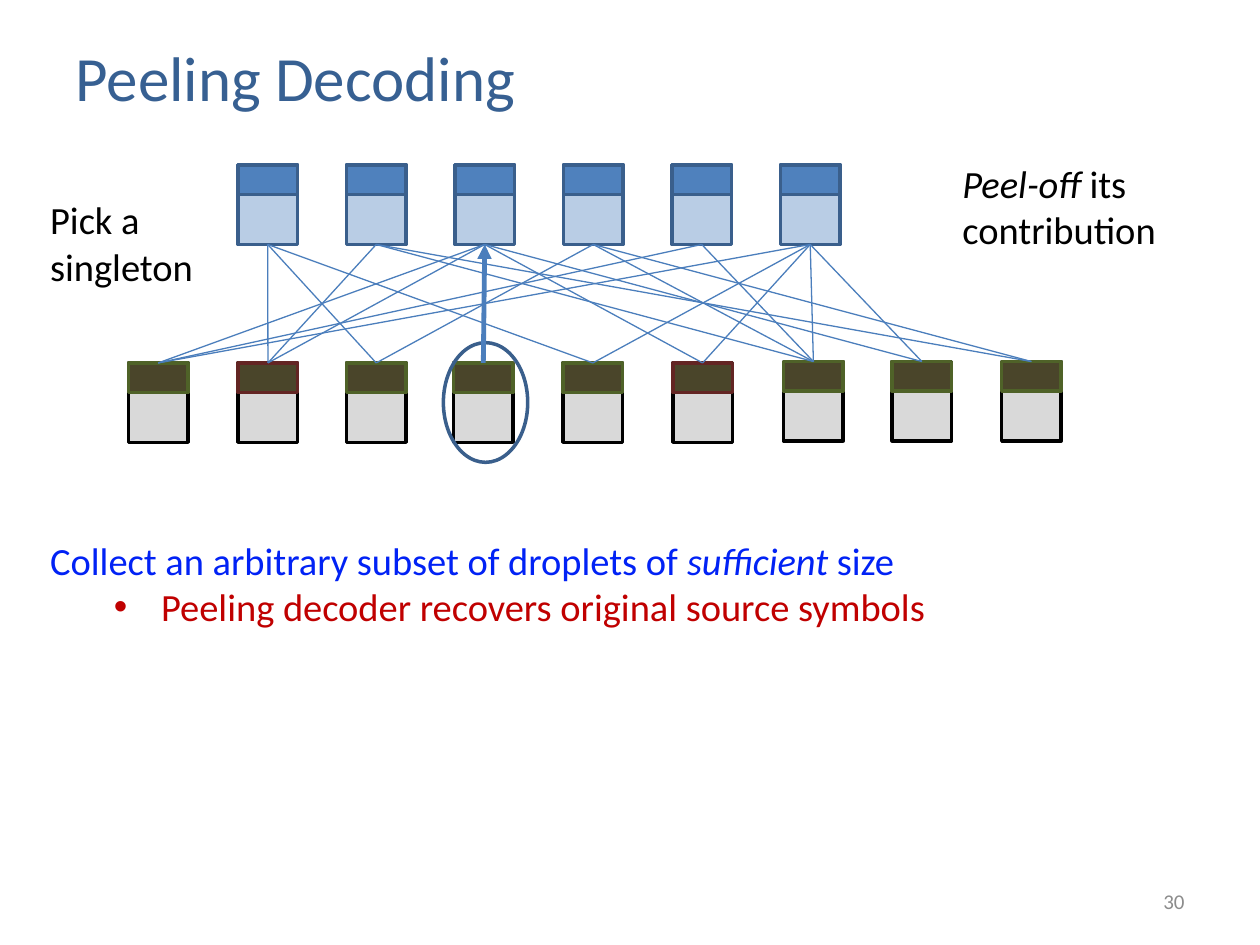
from dataclasses import dataclass

from lxml.etree import SubElement
from pptx import Presentation
from pptx.dml.color import RGBColor
from pptx.enum.shapes import MSO_CONNECTOR, MSO_SHAPE
from pptx.enum.text import MSO_ANCHOR, MSO_AUTO_SIZE, PP_ALIGN
from pptx.oxml.ns import qn
from pptx.shapes.autoshape import Shape
from pptx.slide import Slide
from pptx.util import Pt

FONT = "Calibri"
TITLE_BLUE = RGBColor(0x37, 0x60, 0x92)
OUTLINE_BLUE = RGBColor(0x3A, 0x5F, 0x8C)
EDGE_BLUE = RGBColor(0x4B, 0x7E, 0xBC)
SYMBOL_HEADER = RGBColor(0x4F, 0x81, 0xBD)
SYMBOL_BODY = RGBColor(0xB9, 0xCD, 0xE5)
DROPLET_HEADER = RGBColor(0x4A, 0x45, 0x2A)
DROPLET_BODY = RGBColor(0xD9, 0xD9, 0xD9)
GREEN = RGBColor(0x4F, 0x62, 0x28)
DARK_RED = RGBColor(0x63, 0x25, 0x23)
BLACK = RGBColor(0, 0, 0)
GREY = RGBColor(0x8C, 0x8C, 0x8C)
CLAIM_BLUE = RGBColor(0x01, 0x22, 0xF5)
RESULT_RED = RGBColor(0xC0, 0, 0)

PACKET_WIDTH, PACKET_HEIGHT, HEADER_HEIGHT = 34, 45.4, 17
SYMBOL_LEFT, SYMBOL_TOP, SYMBOL_PITCH, SYMBOL_COUNT = 136, 94.3, 62, 6
DROPLET_LEFTS = (73.4, 136.1, 198, 259.2, 321.8, 384.5, 447.8, 509.8, 572.4)
LOWER_TOP, UPPER_TOP = 207.4, 206.6
RED_DROPLETS = {1, 5}
SINGLETON_SYMBOL, SINGLETON_DROPLET = 2, 3

# Droplets that each source symbol contributes to
NEIGHBOURS = (
    (1, 2, 4),
    (1, 6, 8),
    (0, 1, 5, 7, 3),
    (2, 6, 8),
    (0, 6),
    (0, 7, 4, 5, 6),
)


@dataclass(frozen=True)
class PacketStyle:
    body: RGBColor
    body_line: RGBColor
    header: RGBColor
    header_line: RGBColor


@dataclass(frozen=True)
class Packet:
    body: Shape
    header: Shape


@dataclass(frozen=True)
class Phrase:
    text: str
    italic: bool = False


def add_outlined(slide: Slide, kind: MSO_SHAPE, left: float, top: float, width: float,
                 height: float, line: RGBColor, fill: RGBColor | None = None) -> Shape:
    outlined = slide.shapes.add_shape(kind, Pt(left), Pt(top), Pt(width), Pt(height))
    outlined.shadow.inherit = False
    if fill is None:
        outlined.fill.background()
    else:
        outlined.fill.solid()
        outlined.fill.fore_color.rgb = fill
    outlined.line.color.rgb = line
    outlined.line.width = Pt(2)
    return outlined


def add_packet(slide: Slide, left: float, top: float, style: PacketStyle) -> Packet:
    body = add_outlined(slide, MSO_SHAPE.RECTANGLE, left, top, PACKET_WIDTH,
                        PACKET_HEIGHT, style.body_line, style.body)
    header = add_outlined(slide, MSO_SHAPE.RECTANGLE, left, top, PACKET_WIDTH,
                          HEADER_HEIGHT, style.header_line, style.header)
    return Packet(body, header)


def join(slide: Slide, start: Shape, start_side: int, end: Shape, end_side: int,
         width: float, arrow: bool = False) -> None:
    edge = slide.shapes.add_connector(MSO_CONNECTOR.STRAIGHT, 0, 0, 0, 0)
    edge.begin_connect(start, start_side)
    edge.end_connect(end, end_side)
    edge.line.color.rgb = EDGE_BLUE
    edge.line.width = Pt(width)
    if arrow:
        SubElement(edge.line._get_or_add_ln(), qn("a:tailEnd"), type="triangle")
    SubElement(edge._element.spPr, qn("a:effectLst"))


def style_font(font, size: float, color: RGBColor) -> None:
    font.name = FONT
    font.size = Pt(size)
    font.color.rgb = color


def add_text(slide: Slide, left: float, top: float, width: float, height: float,
             phrases: list[Phrase], color: RGBColor = BLACK, size: float = 22) -> Shape:
    box = slide.shapes.add_textbox(Pt(left), Pt(top), Pt(width), Pt(height))
    frame = box.text_frame
    frame.word_wrap = True
    frame.auto_size = MSO_AUTO_SIZE.SHAPE_TO_FIT_TEXT
    for phrase in phrases:
        run = frame.paragraphs[0].add_run()
        run.text = phrase.text
        style_font(run.font, size, color)
        run.font.italic = phrase.italic
    return box


def add_bullet(box: Shape, text: str, color: RGBColor) -> None:
    bullet = box.text_frame.add_paragraph()
    bullet.text = text
    bullet.level = 1
    properties = bullet._p.get_or_add_pPr()
    properties.set("marL", str(Pt(63.4)))
    properties.set("indent", str(Pt(-27)))
    SubElement(properties, qn("a:buFont"), typeface="Arial")
    SubElement(properties, qn("a:buChar"), char="•")
    style_font(bullet.runs[0].font, 22, color)


def main() -> None:
    deck = Presentation()
    deck.slide_width, deck.slide_height = Pt(720), Pt(540)
    slide = deck.slides.add_slide(deck.slide_layouts[5])

    # Title and slide number
    title = slide.shapes.title
    title.left, title.top, title.width, title.height = Pt(36), Pt(-1.4), Pt(648), Pt(90)
    title.text_frame.text = "Peeling Decoding"
    title.text_frame.vertical_anchor = MSO_ANCHOR.MIDDLE
    heading = title.text_frame.paragraphs[0]
    heading.alignment = PP_ALIGN.LEFT
    style_font(heading.runs[0].font, 36, TITLE_BLUE)

    number = add_text(slide, 516, 500.5, 168, 28.8, [Phrase("30")], GREY, 12)
    number.text_frame.auto_size = MSO_AUTO_SIZE.NONE
    number.text_frame.vertical_anchor = MSO_ANCHOR.MIDDLE
    number.text_frame.paragraphs[0].alignment = PP_ALIGN.RIGHT

    # Source symbols
    symbol_style = PacketStyle(SYMBOL_BODY, OUTLINE_BLUE, SYMBOL_HEADER, OUTLINE_BLUE)
    symbols = [add_packet(slide, SYMBOL_LEFT + i * SYMBOL_PITCH, SYMBOL_TOP, symbol_style)
               for i in range(SYMBOL_COUNT)]

    # Droplets
    droplets = []
    for i, left in enumerate(DROPLET_LEFTS):
        header_line = DARK_RED if i in RED_DROPLETS else GREEN
        style = PacketStyle(DROPLET_BODY, BLACK, DROPLET_HEADER, header_line)
        top = LOWER_TOP if i < SYMBOL_COUNT else UPPER_TOP
        droplets.append(add_packet(slide, left, top, style))

    # Bipartite graph
    for symbol, neighbours in zip(symbols, NEIGHBOURS):
        for droplet in neighbours:
            join(slide, symbol.body, 2, droplets[droplet].header, 0, 0.75)

    # Singleton and its decoding step
    add_text(slide, 21.6, 108.7, 136.8, 60.5, [Phrase("Pick a singleton")])
    add_outlined(slide, MSO_SHAPE.OVAL, 253.4, 195.8, 48.2, 68.4, OUTLINE_BLUE)
    join(slide, droplets[SINGLETON_DROPLET].header, 0,
         symbols[SINGLETON_SYMBOL].body, 2, 2.75, arrow=True)
    add_text(slide, 542.9, 87.8, 136.8, 60.5,
             [Phrase("Peel-off ", italic=True), Phrase("its contribution")])

    # Conclusion
    conclusion = add_text(slide, 21.6, 303.1, 646.6, 60.5, [
        Phrase("Collect an arbitrary subset of droplets of "),
        Phrase("sufficient", italic=True),
        Phrase(" size"),
    ], CLAIM_BLUE)
    add_bullet(conclusion, "Peeling decoder recovers original source symbols", RESULT_RED)

    deck.save("out.pptx")


if __name__ == "__main__":
    main()
